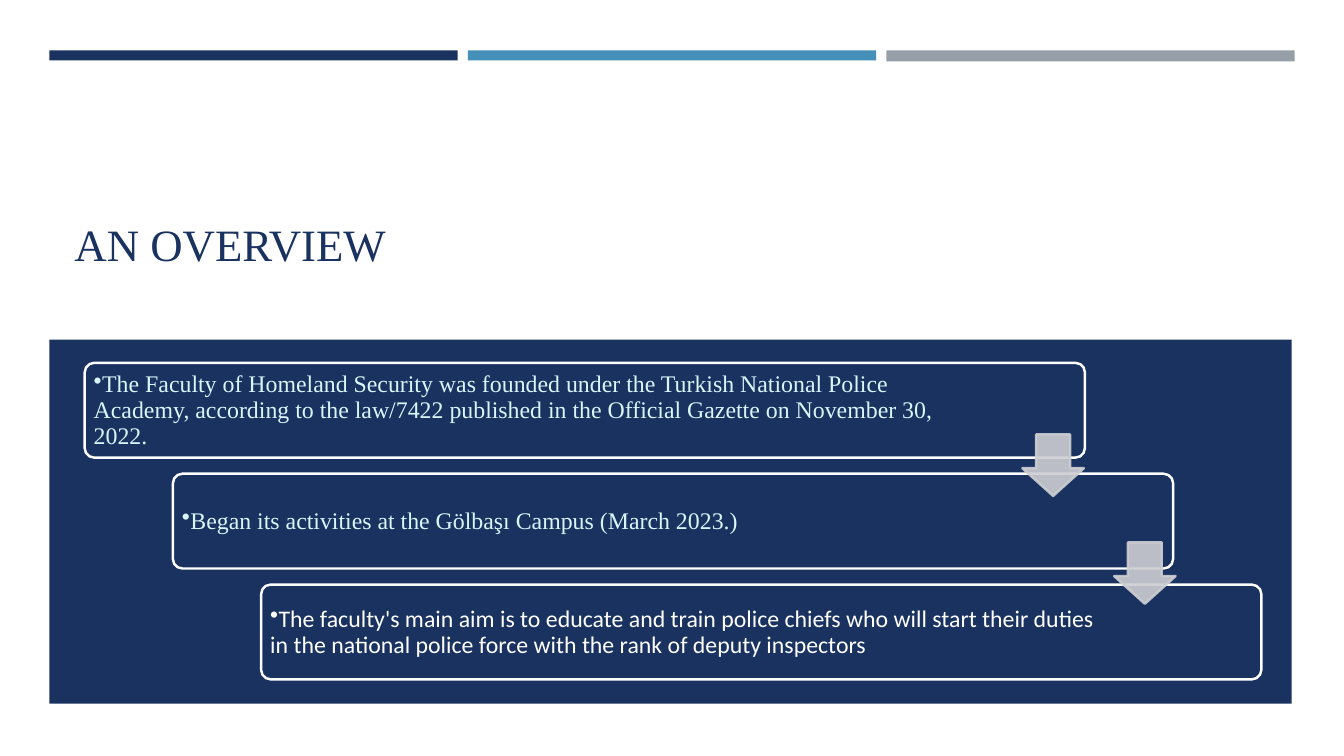
from lxml.etree import SubElement
from pptx import Presentation
from pptx.dml.color import RGBColor
from pptx.enum.shapes import MSO_SHAPE
from pptx.enum.text import MSO_ANCHOR, PP_ALIGN
from pptx.oxml.ns import qn
from pptx.util import Inches, Pt

COLORS = {
    "navy": "1A3260",
    "blue": "4590B8",
    "gray": "969FA7",
    "arrow": "CDCED2",
    "ice": "DAF5FA",
    "white": "FFFFFF",
}
SERIF = "Times New Roman"
BARS = [("navy", 0.1), ("blue", 0.1), ("gray", 0.11)]
STEPS = [
    ("The Faculty of Homeland Security was founded under the Turkish National "
     "Police Academy, according to the law/7422 published in the Official "
     "Gazette on November 30, 2022.", 8.9, SERIF, "ice"),
    ("Began its activities at the Gölbaşı Campus (March 2023.)",
     8.37, SERIF, "ice"),
    ("The faculty's main aim is to educate and train police chiefs who will "
     "start their duties in the national police force with the rank of deputy "
     "inspectors", 8.37, "Calibri", "white"),
]
ARROWS = [(10.14, 4.31), (11.05, 5.38)]


def rgb(name):
    """Return the palette colour with this name."""
    return RGBColor.from_string(COLORS[name])


def apply_format(target, values):
    """Set each attribute of target from a dict of format values."""
    for attribute, value in values.items():
        setattr(target, attribute, value)


def add_block(slide, preset, box, fill, outline=None, adjustments=()):
    """Add a filled preset shape with an optional outline."""
    block = slide.shapes.add_shape(preset, *map(Inches, box))
    block.shadow.inherit = False
    block.fill.solid()
    block.fill.fore_color.rgb = rgb(fill)
    if outline:
        block.line.color.rgb = rgb(outline)
        block.line.width = Pt(1.75)
    else:
        block.line.fill.background()
    for index, value in enumerate(adjustments):
        block.adjustments[index] = value
    return block


def add_label(slide, box, wording, font, color, frame_format):
    """Add a one-paragraph text box and return its paragraph."""
    frame = slide.shapes.add_textbox(*map(Inches, box)).text_frame
    apply_format(frame, {"word_wrap": True, **frame_format})
    paragraph = frame.paragraphs[0]
    paragraph.alignment = PP_ALIGN.LEFT
    run = paragraph.add_run()
    run.text = wording
    apply_format(run.font, font)
    run.font.color.rgb = rgb(color)
    return paragraph


def add_step(slide, index, wording, text_width, typeface, color):
    """Add one rounded step of the staircase with its bulleted text."""
    left, top = 0.84 + 0.875 * index, 3.6 + 1.1 * index
    add_block(slide, MSO_SHAPE.ROUNDED_RECTANGLE, (left, top, 9.92, 0.94),
              "navy", "white", [0.1])
    margins = dict.fromkeys(
        ("margin_left", "margin_top", "margin_right", "margin_bottom"),
        Inches(0.07))
    paragraph = add_label(
        slide, (left + 0.02, top + 0.03, text_width, 0.89), wording,
        {"size": Pt(17), "name": typeface}, color,
        {"vertical_anchor": MSO_ANCHOR.MIDDLE, **margins})
    paragraph.line_spacing = 0.9
    properties = paragraph._p.get_or_add_pPr()
    properties.set("marL", "0")
    properties.set("indent", "0")
    SubElement(properties, qn("a:buChar"), char="•")


def add_step_arrow(slide, left, top):
    """Add a slightly transparent arrow leading to the next step."""
    arrow = add_block(slide, MSO_SHAPE.DOWN_ARROW, (left, top, 0.61, 0.61),
                      "arrow", "arrow", [0.55, 0.45])
    arrow.adjustments[0], arrow.adjustments[1] = 0.55, 0.45
    for color in arrow._element.spPr.iter(qn("a:srgbClr")):
        SubElement(color, qn("a:alpha"), val="90000")


def main():
    """Build the overview slide and save it."""
    deck = Presentation()
    apply_format(deck, {"slide_width": Inches(13.33),
                        "slide_height": Inches(7.5)})
    slide = deck.slides.add_slide(deck.slide_layouts[6])
    for index, (color, height) in enumerate(BARS):
        add_block(slide, MSO_SHAPE.RECTANGLE,
                  (0.49 + 4.15 * index, 0.5, 4.05, height), color)
    add_block(slide, MSO_SHAPE.RECTANGLE, (0.49, 3.37, 12.32, 3.61), "navy")
    add_label(slide, (0.64, 1.12, 12.02, 1.61), "AN OVERVIEW",
              {"size": Pt(32), "name": SERIF}, "navy",
              {"vertical_anchor": MSO_ANCHOR.BOTTOM})
    for index, step in enumerate(STEPS):
        add_step(slide, index, *step)
    for left, top in ARROWS:
        add_step_arrow(slide, left, top)
    deck.save("out.pptx")


if __name__ == "__main__":
    main()
